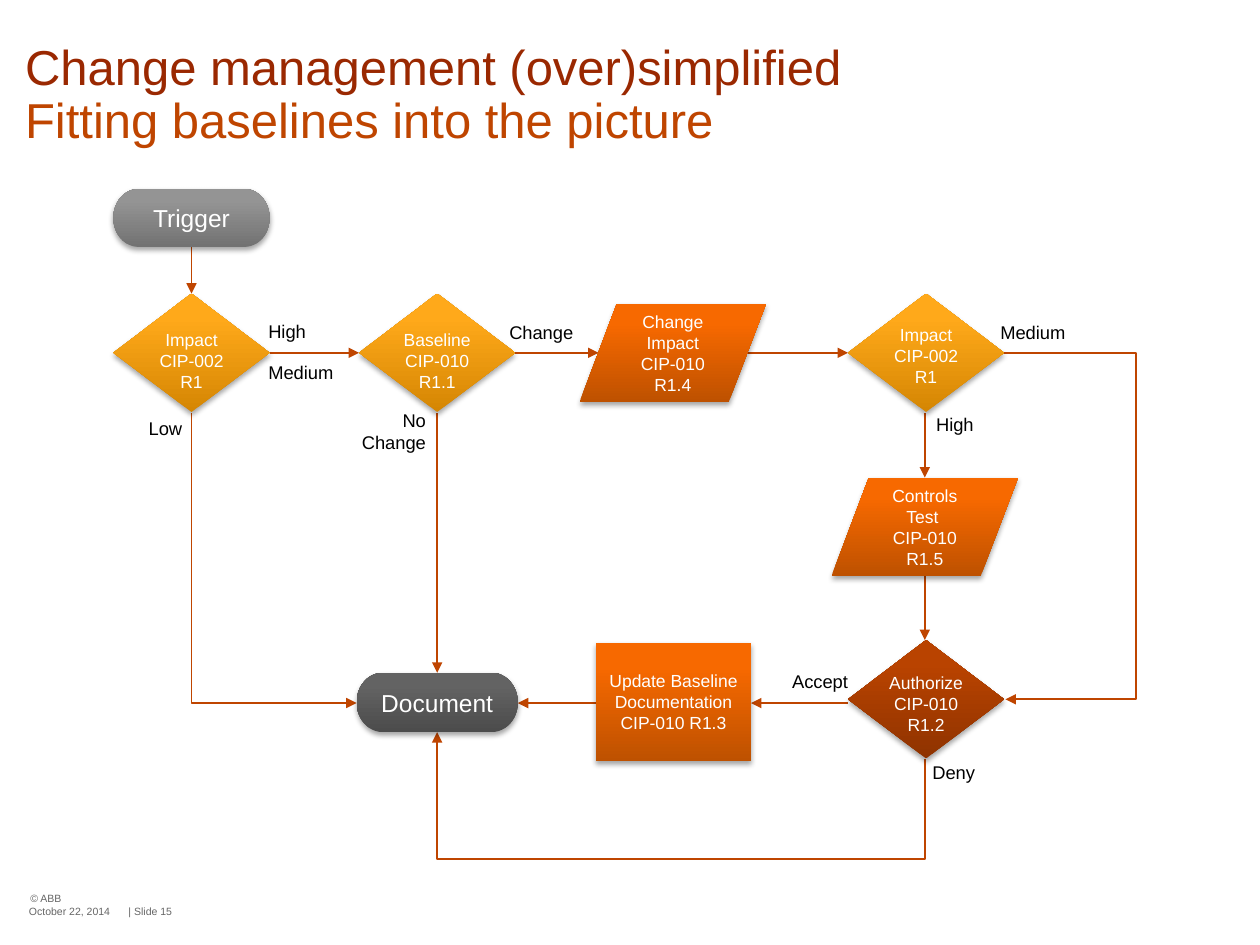
from copy import deepcopy

from lxml.etree import SubElement
from pptx import Presentation
from pptx.dml.color import RGBColor
from pptx.enum.shapes import MSO_CONNECTOR, MSO_SHAPE
from pptx.enum.text import MSO_ANCHOR, PP_ALIGN
from pptx.oxml.ns import qn
from pptx.util import Inches, Pt

LEFT, CENTER, RIGHT = PP_ALIGN.LEFT, PP_ALIGN.CENTER, PP_ALIGN.RIGHT
ACCENT, WHITE, BLACK, GRAY = "BF4500", "FFFFFF", "000000", "666666"
# Gradients run from the bottom colour to the top colour
SILVER, CHARCOAL = ("727272", "949494"), ("4C4C4C", "636363")
AMBER, ORANGE, RUST = ("D58603", "FFA91A"), ("BE5100", "F76900"), ("8F3300", "B94300")
NODE_W, NODE_H = 1.24, 0.94


def rgb(value):
    return RGBColor.from_string(value)


def write(sp, paragraphs, size, color, align=LEFT, inset=0.08, wrap=True,
          anchor=MSO_ANCHOR.TOP, spacing=None):
    tf = sp.text_frame
    frame = dict(word_wrap=wrap, vertical_anchor=anchor)
    frame.update((f"margin_{side}", Inches(inset))
                 for side in ("left", "top", "right", "bottom"))
    for name, value in frame.items():
        setattr(tf, name, value)
    for i, text in enumerate(paragraphs):
        p = tf.add_paragraph() if i else tf.paragraphs[0]
        p.text = text
        p.alignment = align
        if i:
            p.space_before = Pt(11)
        if spacing:
            p.line_spacing = spacing
        for r in p.runs:
            for name, value in dict(name="Arial", size=Pt(size)).items():
                setattr(r.font, name, value)
            r.font.color.rgb = rgb(color)
        # Line breaks take the size of the text around them
        for br in p._p.findall(qn("a:br")):
            br.append(deepcopy(p.runs[0]._r.rPr))


def label(s, x, y, w, h, paragraphs, size, color, **options):
    sp = s.shapes.add_textbox(*map(Inches, (x, y, w, h)))
    write(sp, paragraphs, size, color, **options)


def node(s, kind, x, y, w, h, colors, text="", size=10):
    sp = s.shapes.add_shape(kind, *map(Inches, (x, y, w, h)))
    sp.fill.gradient()
    sp.fill.gradient_angle = 90
    for stop, position, color in zip(sp.fill.gradient_stops, (0, 0.8), colors):
        stop.position = position
        stop.color.rgb = rgb(color)
    sp.line.fill.background()
    # Soft shadow below
    sp.shadow.inherit = False
    effects = sp._element.spPr.find(qn("a:effectLst"))
    shadow = SubElement(effects, qn("a:outerShdw"), blurRad=str(Pt(3.1)),
                        dist=str(Pt(1.8)), dir="5400000", rotWithShape="0")
    black = SubElement(shadow, qn("a:srgbClr"), val=BLACK)
    SubElement(black, qn("a:alpha"), val="35000")
    if text:
        write(sp, [text], size, WHITE, align=CENTER, anchor=MSO_ANCHOR.MIDDLE)


def decision(s, x, y, colors, text, dy=0.2):
    node(s, MSO_SHAPE.FLOWCHART_DECISION, x, y, NODE_W, NODE_H, colors)
    # The label spans the diamond, so its longest word stays on one line
    label(s, x, y + dy, NODE_W, 0.63, [text], 10, WHITE, align=CENTER)


def arrow(s, x1, y1, x2, y2, kind=MSO_CONNECTOR.STRAIGHT):
    cx = s.shapes.add_connector(kind, *map(Inches, (x1, y1, x2, y2)))
    cx.line.color.rgb = rgb(ACCENT)
    cx.line.width = Pt(1)
    SubElement(cx.line._get_or_add_ln(), qn("a:tailEnd"), type="triangle")
    SubElement(cx._element.spPr, qn("a:effectLst"))
    return cx


def bend_at(cx, ratio):
    guides = cx._element.spPr.find(qn("a:prstGeom")).get_or_add_avLst()
    SubElement(guides, qn("a:gd"), name="adj1", fmla=f"val {round(ratio * 100000)}")


def side_elbow(s, x1, y1, x2, y2, bend_x):
    cx = arrow(s, x1, y1, x2, y2, MSO_CONNECTOR.ELBOW)
    bend_at(cx, (bend_x - x1) / (x2 - x1))


def upright_elbow(s, x1, y1, x2, y2, bend_y=None):
    """Elbow that leaves vertically: one corner, or two at bend_y."""
    w, h = abs(y2 - y1), abs(x2 - x1)
    x, y = (x1 + x2 - w) / 2, (y1 + y2 - h) / 2
    cx = arrow(s, x, y, x + w, y + h, MSO_CONNECTOR.ELBOW)
    xfrm = cx._element.spPr.find(qn("a:xfrm"))
    xfrm.set("rot", "16200000" if y2 > y1 else "5400000")
    xfrm.set("flipH", "1")
    if bend_y is None:
        cx._element.spPr.find(qn("a:prstGeom")).set("prst", "bentConnector2")
    else:
        bend_at(cx, (bend_y - y1) / (y2 - y1))


def heading(s, x, y, w):
    for dy, h, text, color in (
            (0.34, 0.5, "Change management (over)simplified", "9A2801"),
            (0.76, 0.98, "Fitting baselines into the picture", ACCENT)):
        label(s, x, y + dy, w, h, [text], 28, color, inset=0, spacing=0.9)


def flowchart(s, x, y):
    row = y + 0.83

    # Connectors
    for x1, y1, x2, y2 in (
            (0.62, 0.46, 0.62, 0.83), (1.24, 1.3, 1.95, 1.3),
            (3.19, 1.3, 3.85, 1.3), (5.03, 1.3, 5.83, 1.3),
            (2.57, 1.78, 2.57, 3.84), (6.44, 1.78, 6.44, 2.29),
            (6.44, 3.07, 6.44, 3.58), (5.83, 4.08, 5.06, 4.08),
            (3.83, 4.08, 3.21, 4.08)):
        arrow(s, x + x1, y + y1, x + x2, y + y2)
    upright_elbow(s, x + 0.62, y + 1.78, x + 1.93, y + 4.08)
    upright_elbow(s, x + 6.44, y + 4.52, x + 2.57, y + 4.31, y + 5.32)
    side_elbow(s, x + 7.06, y + 1.3, x + 7.08, y + 4.05, x + 8.11)

    # Start, end and process steps
    terminator, data = MSO_SHAPE.FLOWCHART_TERMINATOR, MSO_SHAPE.FLOWCHART_DATA
    node(s, terminator, x, y, NODE_W, 0.46, SILVER, "Trigger", 14)
    node(s, terminator, x + 1.93, y + 3.84, 1.28, 0.47, CHARCOAL, "Document", 14)
    node(s, data, x + 3.7, y + 0.91, 1.48, 0.78, ORANGE, "Change Impact CIP-010 R1.4")
    node(s, data, x + 5.7, y + 2.29, 1.48, 0.78, ORANGE, "Controls Test \nCIP-010 R1.5")
    node(s, MSO_SHAPE.RECTANGLE, x + 3.83, y + 3.6, 1.23, NODE_H, ORANGE,
         "Update Baseline Documentation CIP-010 R1.3")

    # Decisions
    impact = "Impact\nCIP-002\nR1"
    decision(s, x, row, AMBER, impact)
    decision(s, x + 1.95, row, AMBER, "Baseline\nCIP-010\nR1.1")
    decision(s, x + 5.83, row, AMBER, impact, 0.16)
    decision(s, x + 5.83, y + 3.58, RUST, "Authorize\nCIP-010\nR1.2", 0.17)

    # Branch labels
    for dx, dy, h, align, paragraphs in (
            (0.2, 1.73, 0.34, LEFT, ["Low"]),
            (1.15, 0.96, 0.62, LEFT, ["High", "Medium"]),
            (1.84, 1.67, 0.47, RIGHT, ["No\nChange"]),
            (3.01, 0.97, 0.34, RIGHT, ["Change"]),
            (6.96, 0.97, 0.34, LEFT, ["Medium"]),
            (6.45, 1.7, 0.34, LEFT, ["High"]),
            (5.19, 3.74, 0.34, RIGHT, ["Accept"]),
            (6.42, 4.46, 0.34, LEFT, ["Deny"])):
        label(s, x + dx, y + dy, 0.72, h, paragraphs, 10.5, BLACK,
              align=align, wrap=False)


def footer(s, x, y):
    for dx, dy, w, text in ((0.01, 0, 1.22, "© ABB"),
                            (0, 0.1, 0.8, "October 22, 2014"),
                            (0.79, 0.1, 0.53, "| Slide 15")):
        label(s, x + dx, y + dy, w, 0.1, [text], 6, GRAY, inset=0)


def main():
    prs = Presentation()
    prs.slide_width, prs.slide_height = Inches(10), Inches(7.5)
    s = prs.slides.add_slide(prs.slide_layouts[6])
    heading(s, 0.2, 0, 9.56)
    flowchart(s, 0.9, 1.5)
    footer(s, 0.23, 7.08)
    prs.save("out.pptx")


if __name__ == "__main__":
    main()
